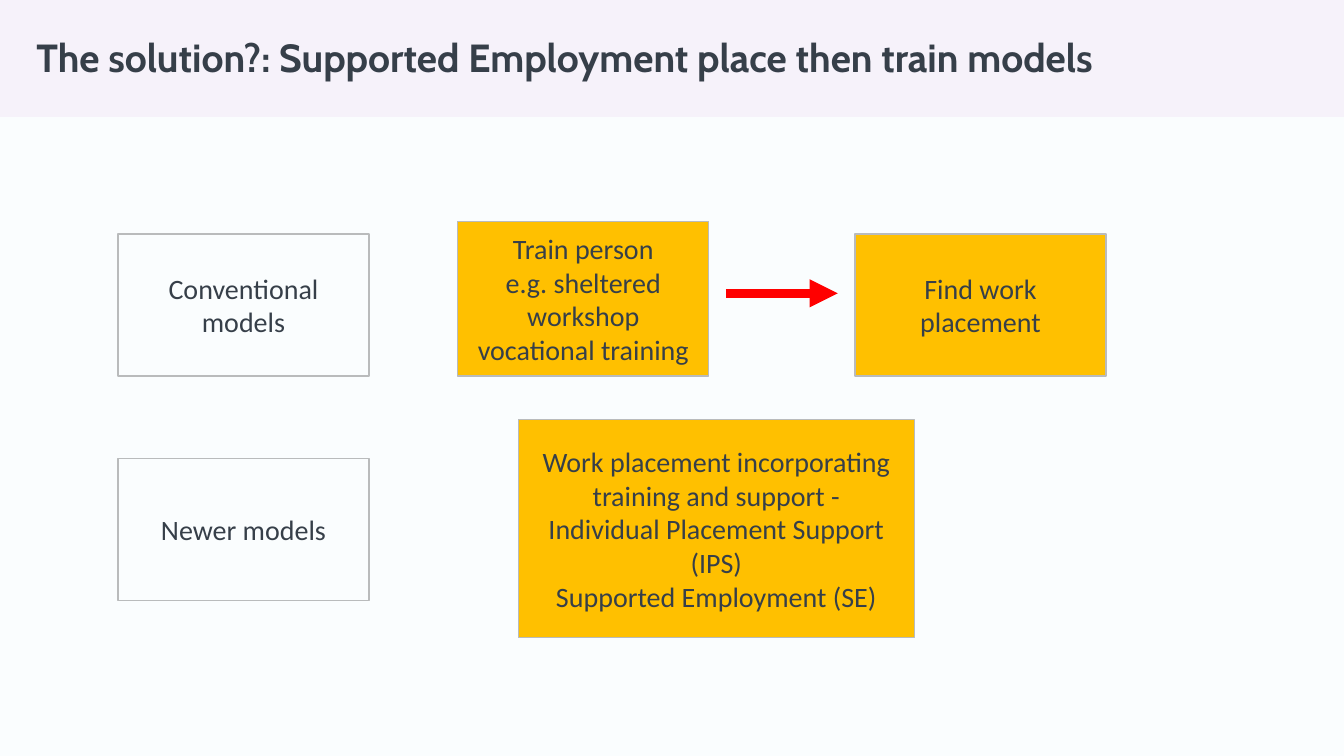
from lxml.etree import SubElement
from pptx import Presentation
from pptx.dml.color import RGBColor
from pptx.enum.shapes import MSO_CONNECTOR, MSO_SHAPE
from pptx.enum.text import MSO_ANCHOR, PP_ALIGN
from pptx.oxml.ns import qn
from pptx.util import Inches, Pt

# Content
TITLE = "The solution?: Supported Employment place then train models"
CONVENTIONAL = ["Conventional models"]
NEWER = ["Newer models"]
TRAIN = ["Train person", "e.g. sheltered workshop vocational training"]
FIND_WORK = ["Find work placement"]
PLACE_THEN_TRAIN = [
    "Work placement incorporating training and support -",
    "Individual Placement Support (IPS)",
    "Supported Employment (SE)",
]

COLORS = {
    "background": "FAFDFE",
    "band": "F6F2FA",
    "text": "363F49",
    "step": "FFC000",
    "outline": "B9BBBC",
    "arrow": "FF0000",
}

# Grid in inches: label, training and work columns; two model rows
SLIDE_W, SLIDE_H = 13.33, 7.5
BAND_H = 1.16
LABEL_X, TRAIN_X, WORK_X = 1.17, 4.54, 8.48
BOX_W, BOX_H = 2.49, 1.41
ROW_1, ROW_2 = 2.32, 4.55
TRAIN_EXTRA = 0.12  # the training box rises above its row
PLACE_W, PLACE_H = 3.93, 2.16
PLACE_X = (TRAIN_X + WORK_X + BOX_W - PLACE_W) / 2 - 0.65
PLACE_Y = ROW_2 + BOX_H / 2 - PLACE_H / 2 - 0.01
ARROW_Y = 2.91
ARROW_GAP = 0.17

BOXES = [
    (TRAIN, TRAIN_X, ROW_1 - TRAIN_EXTRA, BOX_W, BOX_H + TRAIN_EXTRA, "step"),
    (FIND_WORK, WORK_X, ROW_1, BOX_W, BOX_H, "step"),
    (PLACE_THEN_TRAIN, PLACE_X, PLACE_Y, PLACE_W, PLACE_H, "step"),
    (CONVENTIONAL, LABEL_X, ROW_1, BOX_W, BOX_H, None),
    (NEWER, LABEL_X, ROW_2, BOX_W, BOX_H, None),
]


def color(key):
    return RGBColor.from_string(COLORS[key])


def add_run(paragraph, text, font_name, size, bold=False):
    run = paragraph.add_run()
    run.text = text
    run.font.name = font_name
    run.font.size = Pt(size)
    run.font.bold = bold
    run.font.color.rgb = color("text")


def add_rectangle(slide, x, y, w, h, fill, outline=None):
    rectangle = slide.shapes.add_shape(
        MSO_SHAPE.RECTANGLE, Inches(x), Inches(y), Inches(w), Inches(h))
    rectangle.shadow.inherit = False
    if fill:
        rectangle.fill.solid()
        rectangle.fill.fore_color.rgb = color(fill)
    else:
        rectangle.fill.background()
    if outline:
        rectangle.line.color.rgb = color(outline)
        rectangle.line.width = Pt(1)
    else:
        rectangle.line.fill.background()
    return rectangle


def add_box(slide, lines, x, y, w, h, fill):
    frame = add_rectangle(slide, x, y, w, h, fill, "outline").text_frame
    frame.word_wrap = True
    frame.vertical_anchor = MSO_ANCHOR.MIDDLE
    for i, line in enumerate(lines):
        paragraph = frame.add_paragraph() if i else frame.paragraphs[0]
        paragraph.alignment = PP_ALIGN.CENTER
        add_run(paragraph, line, "Calibri", 20)


def add_arrow(slide, x1, x2, y):
    arrow = slide.shapes.add_connector(
        MSO_CONNECTOR.STRAIGHT, Inches(x1), Inches(y), Inches(x2), Inches(y))
    arrow.line.color.rgb = color("arrow")
    arrow.line.width = Pt(6.75)
    SubElement(arrow.line._get_or_add_ln(), qn("a:tailEnd"), type="triangle")
    SubElement(arrow._element.spPr, qn("a:effectLst"))


def add_title(slide):
    title = slide.shapes.title
    title.left, title.top = Inches(0.26), Inches(0.28)
    title.width, title.height = Inches(12.15), Inches(0.62)
    frame = title.text_frame
    frame.word_wrap = True
    frame.vertical_anchor = MSO_ANCHOR.MIDDLE
    paragraph = frame.paragraphs[0]
    paragraph.alignment = PP_ALIGN.LEFT
    paragraph.line_spacing = 0.9
    add_run(paragraph, TITLE, "Cabin", 28, bold=True)


def main():
    deck = Presentation()
    deck.slide_width, deck.slide_height = Inches(SLIDE_W), Inches(SLIDE_H)
    slide = deck.slides.add_slide(deck.slide_layouts[5])
    slide.background.fill.solid()
    slide.background.fill.fore_color.rgb = color("background")

    # Title on its band, which goes to the back
    band = add_rectangle(slide, 0, 0, SLIDE_W, BAND_H, "band")
    slide.shapes.title._element.addprevious(band._element)
    add_title(slide)

    # Models and their steps
    for box in BOXES:
        add_box(slide, *box)
    add_arrow(slide, TRAIN_X + BOX_W + ARROW_GAP, WORK_X - ARROW_GAP, ARROW_Y)

    deck.save("out.pptx")


if __name__ == "__main__":
    main()
